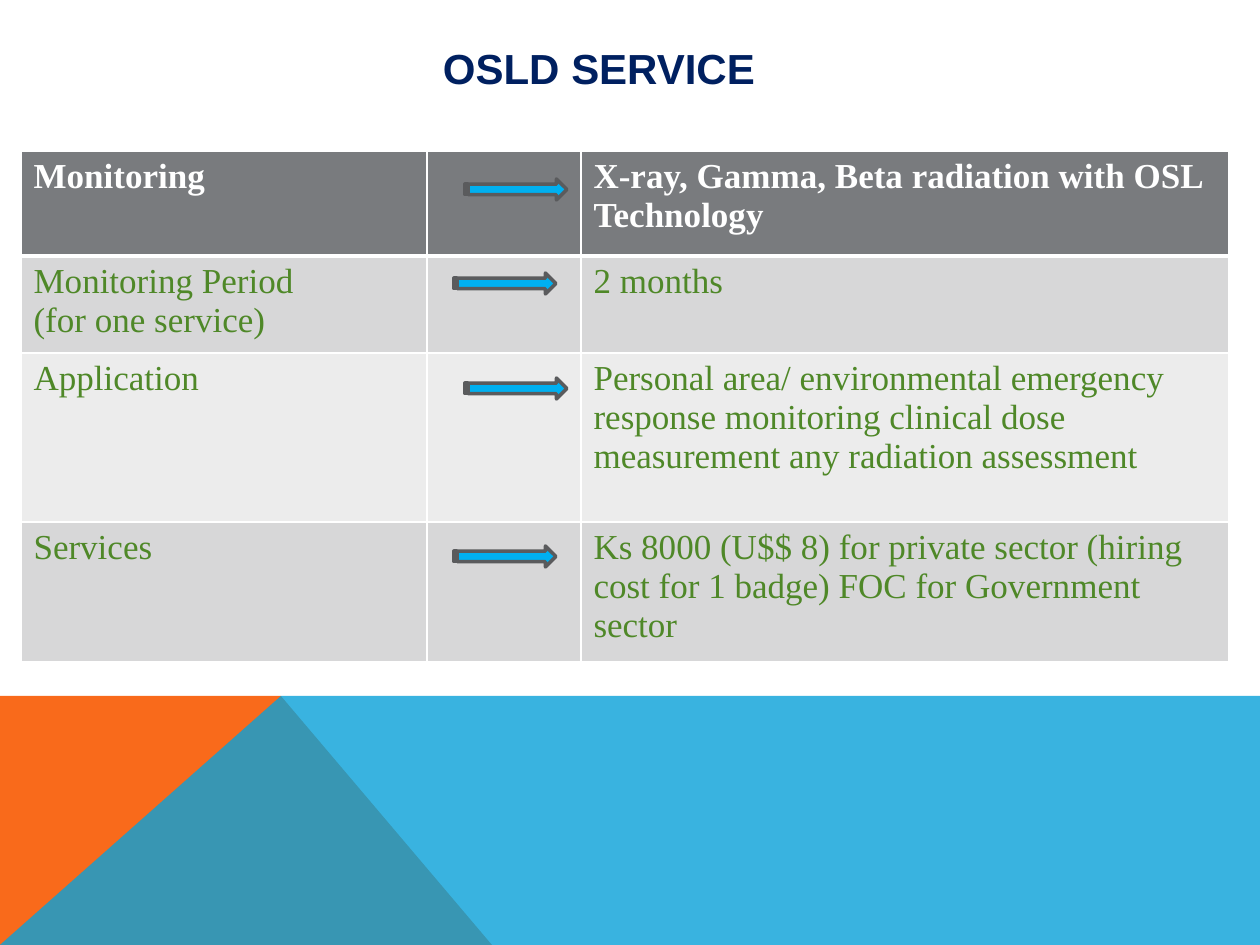
"""Build the OSLD service slide with its table, arrows and coloured footer."""
from lxml import etree
from pptx import Presentation
from pptx import util as u
from pptx.dml import color
from pptx.enum import shapes, text
from pptx.oxml import ns

PX = 9144000 // 1260
GREEN, WHITE, HEADER = "4F8828", "FFFFFF", "797B7E"
BANDS = ("D7D7D8", "ECECEC")
COLUMNS = (406, 154, 648)
ROWS = (
    (105, ["Monitoring"], "X-ray, Gamma, Beta radiation with OSL Technology"),
    (97, ["Monitoring Period", "(for one service)"], "2 months"),
    (169, ["Application"], "Personal area/ environmental emergency response "
     "monitoring clinical dose measurement any radiation assessment"),
    (140, ["Services"], "Ks 8000 (U$$ 8) for private sector (hiring cost for 1 badge) "
     "FOC for Government sector"),
)
ARROWS = ((465, 179), (454, 273), (465, 378), (454, 546))


def px(*lengths):
    """Turn pixel lengths into EMU."""
    return [u.Emu(length * PX) for length in lengths]


def rgb(value):
    """Turn a hex string into a colour."""
    return color.RGBColor.from_string(value)


def paint(item, value):
    """Give a shape or cell a solid fill."""
    item.fill.solid()
    item.fill.fore_color.rgb = rgb(value)


def write(frame, lines, size, font, value, bold=False, align=text.PP_ALIGN.LEFT):
    """Write one paragraph for each line."""
    for index, line in enumerate(lines):
        para = frame.add_paragraph() if index else frame.paragraphs[0]
        para.alignment = align
        span = para.add_run()
        span.text = line
        span.font.size = u.Pt(size)
        span.font.name = font
        span.font.bold = bold
        span.font.color.rgb = rgb(value)


def add_footer_area(page, points, value, opacity=100):
    """Draw a filled outline without a line."""
    builder = page.shapes.build_freeform(*points[0], scale=PX)
    builder.add_line_segments(points[1:], close=True)
    area = builder.convert_to_shape()
    area.shadow.inherit = False
    area.line.fill.background()
    paint(area, value)
    if opacity < 100:
        tone = area.fill._xPr.find(".//" + ns.qn("a:srgbClr"))
        etree.SubElement(tone, ns.qn("a:alpha"), val=str(opacity * 1000))


def add_title(page, title):
    """Add the centred slide title."""
    box = page.shapes.add_textbox(*px(32, 3, 1134, 130))
    frame = box.text_frame
    frame.word_wrap = True
    frame.vertical_anchor = text.MSO_ANCHOR.MIDDLE
    write(frame, [title], 24, "Arial", "002060", True, text.PP_ALIGN.CENTER)


def add_borders(cell, widths):
    """Put white borders of the given point widths around a cell."""
    properties = cell._tc.get_or_add_tcPr()
    for index, (side, width) in enumerate(zip("LRTB", widths)):
        edge = etree.Element(ns.qn("a:ln" + side), w=str(u.Pt(width)))
        fill = etree.SubElement(edge, ns.qn("a:solidFill"))
        etree.SubElement(fill, ns.qn("a:srgbClr"), val=WHITE)
        properties.insert(index, edge)


def add_service_table(page):
    """Add the table of service details."""
    height = sum(row[0] for row in ROWS)
    frame = page.shapes.add_table(len(ROWS), len(COLUMNS), *px(21, 151, sum(COLUMNS), height))
    table = frame.table
    for column, width in zip(table.columns, px(*COLUMNS)):
        column.width = width
    for index, (height, label, detail) in enumerate(ROWS):
        heading = index == 0
        table.rows[index].height = px(height)[0]
        for cell, lines in zip(table.rows[index].cells, (label, [], [detail])):
            paint(cell, HEADER if heading else BANDS[(index - 1) % 2])
            add_borders(cell, (1, 1, 3 if index == 1 else 1, 3 if heading else 1))
            write(cell.text_frame, lines, 20, "Times New Roman",
                  WHITE if heading else GREEN, heading)


def add_arrow(page, left, top):
    """Add a striped arrow between a label and its detail."""
    arrow = page.shapes.add_shape(
        shapes.MSO_SHAPE.STRIPED_RIGHT_ARROW, *px(left, top, 102, 21))
    arrow.shadow.inherit = False
    paint(arrow, "00B0F0")
    arrow.line.color.rgb = rgb("5A5B5D")
    arrow.line.width = u.Pt(2)


def main():
    """Build and save the slide."""
    deck = Presentation()
    deck.slide_width, deck.slide_height = px(1260, 945)
    page = deck.slides.add_slide(deck.slide_layouts[6])
    add_footer_area(page, [(0, 945), (0, 696), (281, 696), (492, 945)], "F96A1B")
    add_footer_area(page, [(0, 945), (281, 696), (1260, 696), (1260, 945)], "08A1D9", 80)
    add_title(page, "OSLD SERVICE")
    add_service_table(page)
    for left, top in ARROWS:
        add_arrow(page, left, top)
    deck.save("out.pptx")


if __name__ == "__main__":
    main()
